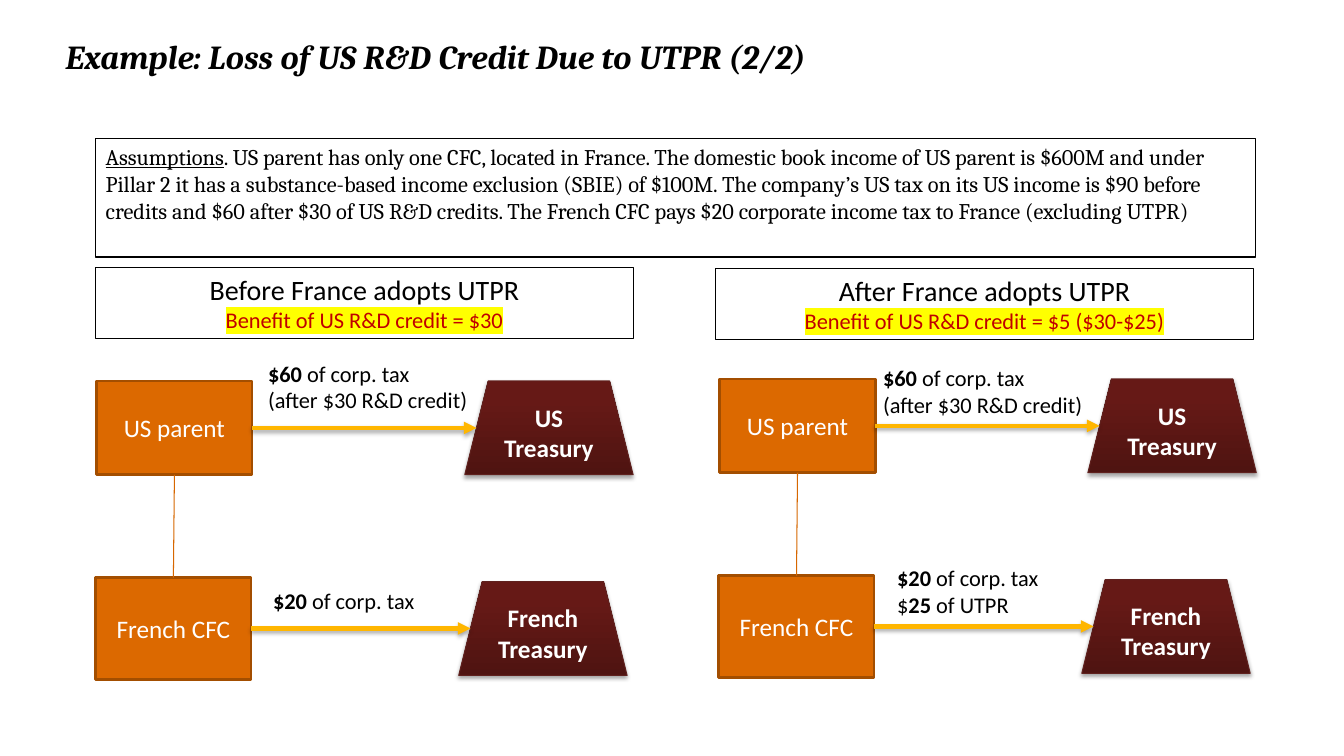
import pptx
import pptx.util
import pptx.dml.color
import pptx.enum.shapes
import pptx.enum.text
import pptx.oxml
import pptx.oxml.ns
import lxml.etree

Inches = pptx.util.Inches
Pt = pptx.util.Pt
SHAPES = pptx.enum.shapes.MSO_SHAPE
ALIGN = pptx.enum.text.PP_ALIGN
ANCHOR = pptx.enum.text.MSO_ANCHOR
qn = pptx.oxml.ns.qn

TITLE = "Example: Loss of US R&D Credit Due to UTPR (2/2)"
ASSUMPTIONS = [
    ("Assumptions", "u"),
    (". US parent has only one CFC, located in France. The domestic book income of US parent "
     "is $600M and under Pillar 2 it has a substance-based income exclusion (SBIE) of $100M. "
     "The company’s US tax on its US income is $90 before credits and $60 after $30 of US R&D "
     "credits. The French CFC pays $20 corporate income tax to France (excluding UTPR)", ""),
]
US_TAX = [[("$60", "b"), (" of corp. tax ", "")], [("(after $30 R&D credit)", "")]]
FRENCH_TAX = [("$20 ", "b"), ("of corp. tax", "")]
UTPR_TAX = [("$", ""), ("25", "b"), (" of UTPR", "")]
SCENARIOS = [
    {"shift": (0, 0), "heading": "Before France adopts UTPR",
     "benefit": "Benefit of US R&D credit = $30", "heading_at": (0.95, 2.65),
     "payments": [((2.56, 3.52, 2.22, 0.64), US_TAX),
                  ((2.61, 5.78, 1.67, 0.37), [FRENCH_TAX])]},
    {"shift": (6.18, -0.02), "heading": "After France adopts UTPR",
     "benefit": "Benefit of US R&D credit = $5 ($30-$25)", "heading_at": (7.1, 2.66),
     "payments": [((8.66, 3.56, 2.22, 0.64), US_TAX),
                  ((8.8, 5.55, 1.67, 0.64), [FRENCH_TAX, UTPR_TAX])]},
]
ENTITIES = [
    ("US parent", (0.96, 3.78, 1.54, 0.93), ["US Treasury"], (4.61, 3.78, 1.67, 0.93)),
    ("French CFC", (0.95, 5.73, 1.54, 1.01), ["French", "Treasury"], (4.55, 5.77, 1.67, 0.93)),
]
TREASURY_STOPS = [(0, "4F1411"), (80, "661916"), (100, "681814")]
TREASURY_SLANT = 0.25


def rgb(value):
    return pptx.dml.color.RGBColor.from_string(value)


def add_xml(parent, markup, index=None):
    element = pptx.oxml.parse_xml(
        markup.replace(">", f" {pptx.oxml.ns.nsdecls('a')}>", 1))
    if index is None:
        parent.append(element)
    else:
        parent.insert(index, element)


def add_shadow(part):
    for effects in part._element.spPr.findall(qn("a:effectLst")):
        part._element.spPr.remove(effects)
    add_xml(part._element.spPr,
            '<a:effectLst><a:outerShdw blurRad="39370" dist="22860" dir="5400000" '
            'rotWithShape="0"><a:srgbClr val="000000"><a:alpha val="35000"/></a:srgbClr>'
            '</a:outerShdw></a:effectLst>')


def write(frame, paragraphs, size, font="Calibri", color="000000", align=ALIGN.LEFT, bold=None):
    frame.word_wrap = True
    for number, runs in enumerate(paragraphs):
        paragraph = frame.paragraphs[0] if number == 0 else frame.add_paragraph()
        paragraph.alignment = align
        paragraph.font.size = Pt(size)
        paragraph.font.name = font
        paragraph.font.color.rgb = rgb(color)
        paragraph.font.bold = bold
        for text, style in runs:
            run = paragraph.add_run()
            run.text = text
            if "b" in style:
                run.font.bold = True
            if "u" in style:
                run.font.underline = True


def add_box(box, kind=SHAPES.RECTANGLE, fill=None, line="000000", width=0.75, anchor=ANCHOR.TOP):
    part = slide.shapes.add_shape(kind, *map(Inches, box))
    part.shadow.inherit = False
    if fill:
        part.fill.solid()
        part.fill.fore_color.rgb = rgb(fill)
    else:
        part.fill.background()
    part.line.color.rgb = rgb(line)
    part.line.width = Pt(width)
    part.text_frame.vertical_anchor = anchor
    return part


def add_line(start, end, color, width):
    line = slide.shapes.add_connector(
        pptx.enum.shapes.MSO_CONNECTOR.STRAIGHT, *map(Inches, (*start, *end)))
    line.line.color.rgb = rgb(color)
    line.line.width = Pt(width)
    add_xml(line._element.spPr, "<a:effectLst></a:effectLst>")
    return line


def add_treasury(box, lines):
    treasury = add_box(box, SHAPES.TRAPEZOID, line="5F211E", anchor=ANCHOR.MIDDLE)
    treasury.adjustments[0] = TREASURY_SLANT
    properties = treasury._element.spPr
    no_fill = properties.find(qn("a:noFill"))
    stops = "".join(f'<a:gs pos="{at * 1000}"><a:srgbClr val="{color}"/></a:gs>'
                    for at, color in TREASURY_STOPS)
    add_xml(properties, f'<a:gradFill><a:gsLst>{stops}</a:gsLst>'
            '<a:lin ang="16200000" scaled="0"/></a:gradFill>', properties.index(no_fill))
    properties.remove(no_fill)
    add_shadow(treasury)
    write(treasury.text_frame, [[(line, "")] for line in lines], 18,
          color="FFFFFF", align=ALIGN.CENTER, bold=True)


def add_heading(scenario):
    heading = add_box((*scenario["heading_at"], 5.33, 0.71)).text_frame
    write(heading, [[(scenario["heading"], "")], [(scenario["benefit"], "")]], 20,
          align=ALIGN.CENTER)
    benefit = heading.paragraphs[1]
    benefit.font.size = Pt(16)
    benefit.font.color.rgb = rgb("C00000")
    add_xml(benefit.runs[0].font._element,
            '<a:highlight><a:srgbClr val="FFFF00"/></a:highlight>')


def add_scenario(scenario):
    dx, dy = scenario["shift"]
    for entity, (x, y, w, h), treasury, (tx, ty, tw, th) in ENTITIES:
        owner = add_box((x + dx, y + dy, w, h), fill="DC6900", line="A34E00", width=2,
                        anchor=ANCHOR.MIDDLE)
        write(owner.text_frame, [[(entity, "")]], 18, color="FFFFFF", align=ALIGN.CENTER)
        add_treasury((tx + dx, ty + dy, tw, th), treasury)
        middle = y + dy + h / 2
        arrow = add_line((x + dx + w, middle), (tx + dx + th * TREASURY_SLANT / 2, middle),
                         "FFB600", 3)
        add_xml(arrow.line._get_or_add_ln(), '<a:tailEnd type="triangle"></a:tailEnd>')
        add_shadow(arrow)
    (px, py, pw, ph), (cx, cy, cw, ch) = (entity[1] for entity in ENTITIES)
    add_line((px + dx + pw / 2, py + dy + ph), (cx + dx + cw / 2, cy + dy), "D76700", 0.75)
    add_heading(scenario)
    for box, payment in scenario["payments"]:
        label = slide.shapes.add_textbox(*map(Inches, box))
        write(label.text_frame, payment, 16)


presentation = pptx.Presentation()
presentation.slide_width = Inches(13.33)
presentation.slide_height = Inches(7.5)
slide = presentation.slides.add_slide(presentation.slide_layouts[5])

title = slide.shapes.title
title.left, title.top, title.width, title.height = map(Inches, (0.65, 0.36, 10.85, 1.01))
frame = title.text_frame
frame.margin_left = frame.margin_right = frame.margin_top = frame.margin_bottom = 0
frame.vertical_anchor = ANCHOR.TOP
write(frame, [[(TITLE, "")]], 24, font="Cambria", bold=True)
frame.paragraphs[0].font.italic = True

assumptions = add_box((0.95, 1.37, 11.5, 1.18), fill="FFFFFF")
write(assumptions.text_frame, [ASSUMPTIONS], 16, font="Cambria")

for scenario in SCENARIOS:
    add_scenario(scenario)

presentation.save("out.pptx")
